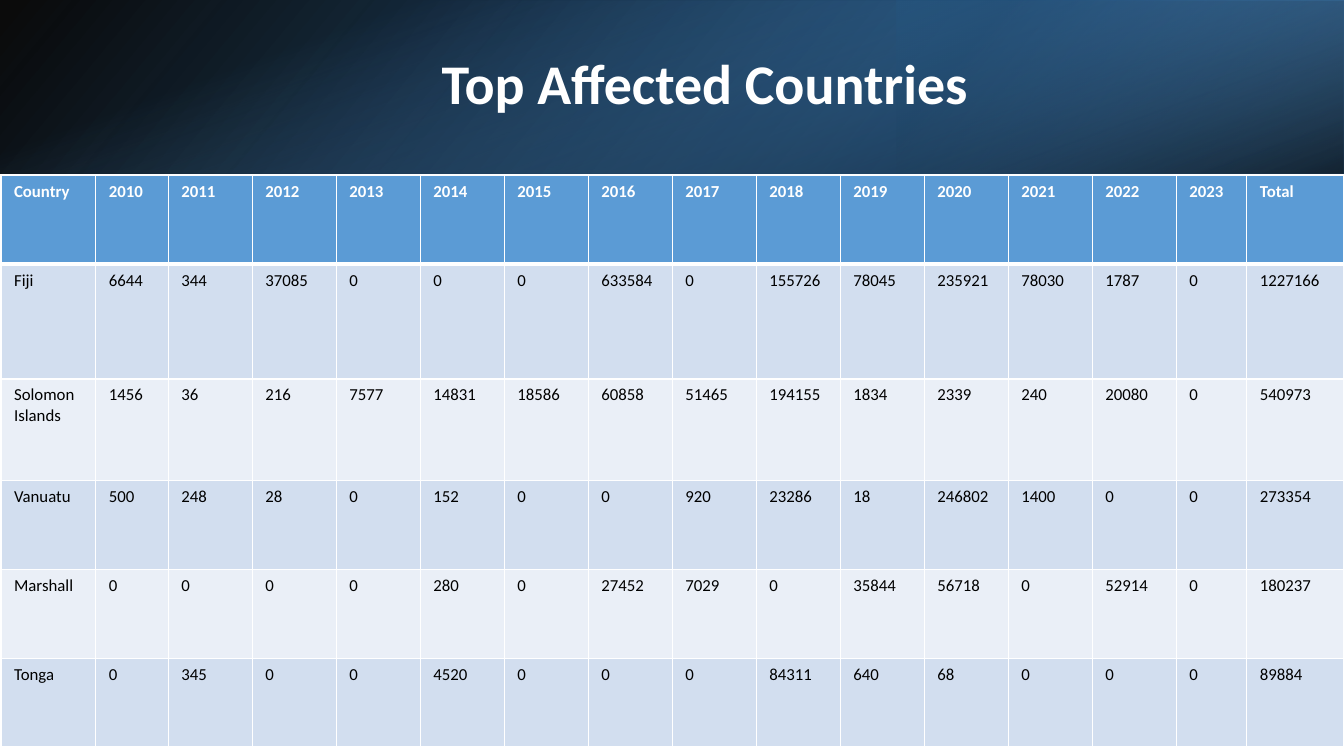
from dataclasses import dataclass

from lxml.etree import SubElement
from pptx import Presentation
from pptx.dml.color import RGBColor
from pptx.enum.shapes import MSO_SHAPE as Preset
from pptx.enum.text import MSO_ANCHOR as Anchor, PP_ALIGN as Align
from pptx.oxml.ns import qn
from pptx.slide import Slide
from pptx.table import _Cell as Cell
from pptx.util import Inches, Pt


@dataclass(frozen=True)
class Theme:
    font: str = "Calibri"
    title_size: int = 40
    table_size: int = 12
    white: str = "FFFFFF"
    black: str = "000000"
    accent: str = "5B9BD5"
    accent_dark: str = "2E75B6"
    accent_darkest: str = "1F4E79"
    bands: tuple[str, str] = ("D2DEEF", "EAEFF7")


@dataclass(frozen=True)
class Stop:
    position: float
    color: str
    opacity: int


@dataclass(frozen=True)
class GradientBand:
    left: float
    top: float
    width: float
    height: float
    angle: int
    stops: tuple[Stop, Stop]
    rotation: int = 0
    flipped: bool = False


THEME = Theme()
SLIDE_WIDTH, SLIDE_HEIGHT = 13.33, 7.5
BANNER_HEIGHT = 1.72

BANNER = (
    GradientBand(0, 0, SLIDE_WIDTH, BANNER_HEIGHT, 140,
                 (Stop(0, THEME.black, 96), Stop(1, THEME.accent_dark, 100)), flipped=True),
    GradientBand(8.89, 0, 4.44, BANNER_HEIGHT, 320,
                 (Stop(0.19, THEME.accent_darkest, 68), Stop(1, THEME.accent, 79)),
                 rotation=180, flipped=True),
    GradientBand(5.8, -5.8, BANNER_HEIGHT, SLIDE_WIDTH, 340,
                 (Stop(0.23, THEME.accent, 0), Stop(0.99, THEME.black, 74)), rotation=90),
)

HEADER = ["Country", *map(str, range(2010, 2024)), "Total"]
COUNTRIES = {
    "Fiji": (6644, 344, 37085, 0, 0, 0, 633584, 0, 155726, 78045, 235921, 78030, 1787, 0, 1227166),
    "Solomon Islands": (1456, 36, 216, 7577, 14831, 18586, 60858, 51465, 194155, 1834, 2339, 240,
                        20080, 0, 540973),
    "Vanuatu": (500, 248, 28, 0, 152, 0, 0, 920, 23286, 18, 246802, 1400, 0, 0, 273354),
    "Marshall": (0, 0, 0, 0, 280, 0, 27452, 7029, 0, 35844, 56718, 0, 52914, 0, 180237),
    "Tonga": (0, 345, 0, 0, 4520, 0, 0, 0, 84311, 640, 68, 0, 0, 0, 89884),
}

TABLE_LEFT, TABLE_TOP, TABLE_WIDTH = 0.01, 1.74, 13.32
ROW_HEIGHTS = (0.88, 1.14, 1.01, 0.88, 0.88, 0.88)
FIRST_WIDTHS, LAST_WIDTHS = (0.94, 0.72), (0.7, 0.96)
MIDDLE_COUNT = len(HEADER) - len(FIRST_WIDTHS) - len(LAST_WIDTHS)
MIDDLE_WIDTH = (TABLE_WIDTH - sum(FIRST_WIDTHS + LAST_WIDTHS)) / MIDDLE_COUNT
COLUMN_WIDTHS = (*FIRST_WIDTHS, *[MIDDLE_WIDTH] * MIDDLE_COUNT, *LAST_WIDTHS)
CELL_FORMAT = {
    "margin_left": Inches(0.13), "margin_right": Inches(0.13),
    "margin_top": Inches(0.06), "margin_bottom": Inches(0.06),
    "vertical_anchor": Anchor.TOP,
}
THIN_LINE, HEADER_LINE = 1, 3


def apply_format(target: object, values: dict[str, object]) -> None:
    for name, value in values.items():
        setattr(target, name, value)


def style_font(font: object, size: int, color: str, bold: bool) -> None:
    apply_format(font, {"name": THEME.font, "size": Pt(size), "bold": bold})
    font.color.rgb = RGBColor.from_string(color)


def draw_gradient_band(slide: Slide, band: GradientBand) -> None:
    box = map(Inches, (band.left, band.top, band.width, band.height))
    shape = slide.shapes.add_shape(Preset.RECTANGLE, *box)
    shape.shadow.inherit = False
    shape.rotation = band.rotation
    shape.line.fill.background()
    if band.flipped:
        shape.element.spPr.find(qn("a:xfrm")).set("flipH", "1")
    shape.fill.gradient()
    # Gradient angles are counted counterclockwise here
    shape.fill.gradient_angle = 360 - band.angle
    for gradient_stop, stop in zip(shape.fill.gradient_stops, band.stops):
        gradient_stop.position = stop.position
        gradient_stop.color.rgb = RGBColor.from_string(stop.color)
    colors = shape.element.spPr.find(qn("a:gradFill")).iter(qn("a:srgbClr"))
    for color, stop in zip(colors, band.stops):
        SubElement(color, qn("a:alpha")).set("val", str(stop.opacity * 1000))


def draw_title(slide: Slide, text: str) -> None:
    box = slide.shapes.add_textbox(Inches(1.5), Inches(0.38), Inches(10.98), Inches(0.96))
    apply_format(box.text_frame, {"word_wrap": True, "vertical_anchor": Anchor.MIDDLE})
    paragraph = box.text_frame.paragraphs[0]
    apply_format(paragraph, {"text": text, "alignment": Align.CENTER, "line_spacing": 0.9})
    style_font(paragraph.runs[0].font, THEME.title_size, THEME.white, True)


def draw_borders(cell: Cell, top: int, bottom: int) -> None:
    properties = cell._tc.get_or_add_tcPr()
    widths = {"a:lnL": THIN_LINE, "a:lnR": THIN_LINE, "a:lnT": top, "a:lnB": bottom}
    for side, width in widths.items():
        line = SubElement(properties, qn(side), w=str(Pt(width)))
        SubElement(SubElement(line, qn("a:solidFill")), qn("a:srgbClr"), val=THEME.white)


def draw_cell(cell: Cell, text: str, row_index: int) -> None:
    is_header = row_index == 0
    fill = THEME.accent if is_header else THEME.bands[(row_index - 1) % 2]
    draw_borders(cell, top=HEADER_LINE if row_index == 1 else THIN_LINE,
                 bottom=HEADER_LINE if is_header else THIN_LINE)
    apply_format(cell, {**CELL_FORMAT, "text": text})
    cell.fill.solid()
    cell.fill.fore_color.rgb = RGBColor.from_string(fill)
    style_font(cell.text_frame.paragraphs[0].runs[0].font, THEME.table_size,
               THEME.white if is_header else THEME.black, is_header)


def draw_table(slide: Slide) -> None:
    rows = [HEADER, *([name, *map(str, values)] for name, values in COUNTRIES.items())]
    box = map(Inches, (TABLE_LEFT, TABLE_TOP, TABLE_WIDTH, sum(ROW_HEIGHTS)))
    table = slide.shapes.add_table(len(rows), len(HEADER), *box).table
    for column, width in zip(table.columns, COLUMN_WIDTHS):
        column.width = Inches(width)
    for row, height in zip(table.rows, ROW_HEIGHTS):
        row.height = Inches(height)
    for row_index, texts in enumerate(rows):
        for column_index, text in enumerate(texts):
            draw_cell(table.cell(row_index, column_index), text, row_index)


def main() -> None:
    presentation = Presentation()
    apply_format(presentation, {"slide_width": Inches(SLIDE_WIDTH),
                                "slide_height": Inches(SLIDE_HEIGHT)})
    slide = presentation.slides.add_slide(presentation.slide_layouts[6])
    # Banner behind the title
    for band in BANNER:
        draw_gradient_band(slide, band)
    draw_title(slide, "Top Affected Countries")
    # Yearly figures by country
    draw_table(slide)
    presentation.save("out.pptx")


if __name__ == "__main__":
    main()
